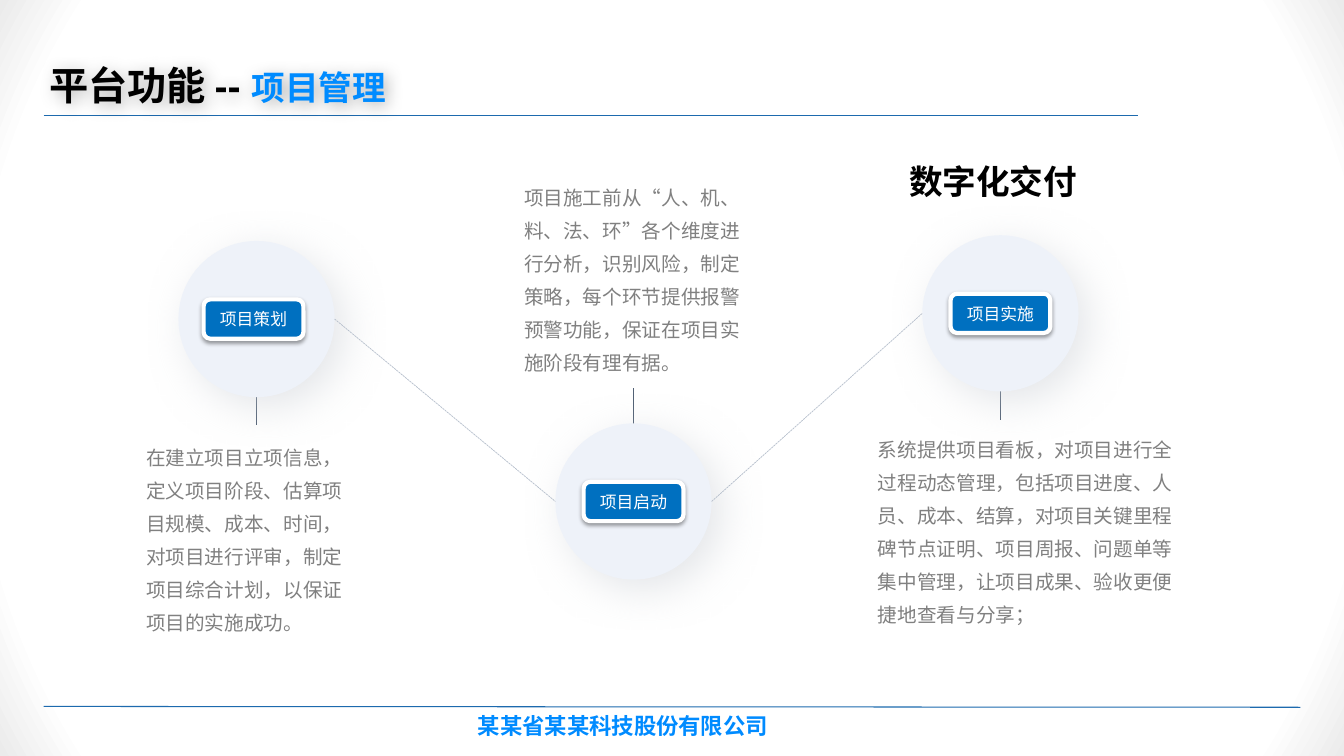
from dataclasses import dataclass
from itertools import pairwise

from pptx import Presentation
from pptx.dml.color import RGBColor
from pptx.enum.dml import MSO_LINE
from pptx.enum.shapes import MSO_CONNECTOR, MSO_SHAPE
from pptx.enum.text import MSO_ANCHOR, PP_ALIGN
from pptx.oxml import parse_xml
from pptx.oxml.ns import qn
from pptx.oxml.xmlchemy import OxmlElement
from pptx.shapes.autoshape import Shape
from pptx.slide import Slide
from pptx.text.text import Font
from pptx.util import Emu, Inches, Pt

COLUMNS, ROWS = 160, 90
CELL = Inches(7.5) / ROWS
DIAMETER = 18.6
BADGE_W, BADGE_H = 11.88, 4.68
STEM = 6.24
TEXT_H = 24.96
NS = 'xmlns:a="http://schemas.openxmlformats.org/drawingml/2006/main"'
CJK = "Noto Sans CJK SC"
BRIGHT = "008BFF"


@dataclass(frozen=True)
class Box:
    col: float
    row: float
    cols: float
    rows: float

    def emu(self) -> tuple[Emu, ...]:
        return tuple(cells(n) for n in (self.col, self.row, self.cols, self.rows))


@dataclass(frozen=True)
class Style:
    size: float
    color: str
    name: str = CJK
    bold: bool = False


@dataclass(frozen=True)
class Shadow:
    color: str
    alpha: int
    blur: float
    distance: float
    angle: int


@dataclass(frozen=True)
class Stage:
    label: str
    detail: str
    col: float
    row: float
    stem_row: float
    text: Box
    badge_shift: float = 0

    @property
    def middle(self) -> float:
        return self.row + DIAMETER / 2


@dataclass(frozen=True)
class Rule:
    start: tuple[float, float]
    end: tuple[float, float]
    color: str
    width: float
    dashed: bool = False


STAGES = [
    Stage("项目策划",
          "在建立项目立项信息，定义项目阶段、估算项目规模、成本、时间，"
          "对项目进行评审，制定项目综合计划，以保证项目的实施成功。",
          21.24, 28.68, 44.4, Box(17.4, 51.36, 24.84, TEXT_H), -0.36),
    Stage("项目启动",
          "项目施工前从“人、机、料、法、环”各个维度进行分析，识别风险，制定策略，"
          "每个环节提供报警预警功能，保证在项目实施阶段有理有据。",
          66.12, 50.4, 46.2, Box(62.4, 20.4, 25.92, TEXT_H)),
    Stage("项目实施",
          "系统提供项目看板，对项目进行全过程动态管理，包括项目进度、人员、成本、结算，"
          "对项目关键里程碑节点证明、项目周报、问题单等集中管理，"
          "让项目成果、验收更便捷地查看与分享；",
          109.8, 28, 43.8, Box(104.52, 50.4, 36.96, TEXT_H)),
]


def cells(n: float) -> Emu:
    return Emu(round(n * CELL))


def rgb(color: str) -> RGBColor:
    return RGBColor.from_string(color)


def set_font(font: Font, style: Style) -> None:
    font.size = Pt(style.size)
    font.bold = style.bold
    font.name = style.name
    font.color.rgb = rgb(style.color)
    ea = OxmlElement("a:ea")
    ea.set("typeface", CJK)
    font._element.find(qn("a:latin")).addnext(ea)


def add_shadow(sp: Shape, shadow: Shadow) -> None:
    sp.shadow.inherit = False
    sp._element.spPr.find(qn("a:effectLst")).append(parse_xml(
        f'<a:outerShdw {NS} blurRad="{Pt(shadow.blur)}" dist="{Pt(shadow.distance)}" '
        f'dir="{shadow.angle * 60000}" algn="ctr" rotWithShape="0">'
        f'<a:srgbClr val="{shadow.color}"><a:alpha val="{shadow.alpha * 1000}"/>'
        '</a:srgbClr></a:outerShdw>'))


def add_rule(s: Slide, rule: Rule) -> None:
    ends = [cells(n) for n in (*rule.start, *rule.end)]
    line = s.shapes.add_connector(MSO_CONNECTOR.STRAIGHT, *ends)
    line.line.color.rgb = rgb(rule.color)
    line.line.width = Pt(rule.width)
    if rule.dashed:
        line.line.dash_style = MSO_LINE.SQUARE_DOT
    line._element.spPr.append(OxmlElement("a:effectLst"))


def add_text(s: Slide, box: Box, text: str, style: Style,
             spacing: float = 1.0, inset: float = 0.1) -> Shape:
    sp = s.shapes.add_textbox(*box.emu())
    tf = sp.text_frame
    tf.word_wrap = True
    tf.margin_left = tf.margin_right = Inches(inset)
    p = tf.paragraphs[0]
    p.text = text
    p.line_spacing = spacing
    set_font(p.font, style)
    return sp


def add_circle(s: Slide, stage: Stage) -> None:
    box = Box(stage.col, stage.row, DIAMETER, DIAMETER)
    sp = s.shapes.add_shape(MSO_SHAPE.OVAL, *box.emu())
    sp.fill.solid()
    sp.fill.fore_color.rgb = rgb("EEF2F9")
    sp.line.fill.background()
    add_shadow(sp, Shadow("CACED4", 50, 30, 10, 45))


def add_badge(s: Slide, stage: Stage) -> None:
    box = Box(stage.col + (DIAMETER - BADGE_W) / 2 + stage.badge_shift,
              stage.middle - BADGE_H / 2, BADGE_W, BADGE_H)
    sp = s.shapes.add_shape(MSO_SHAPE.ROUNDED_RECTANGLE, *box.emu())
    sp.fill.solid()
    sp.fill.fore_color.rgb = rgb("0070C0")
    sp.line.color.rgb = rgb("FFFFFF")
    sp.line.width = Pt(3)
    add_shadow(sp, Shadow("000000", 38, 3.1, 1.6, 90))
    tf = sp.text_frame
    tf.vertical_anchor = MSO_ANCHOR.MIDDLE
    p = tf.paragraphs[0]
    p.text = stage.label
    p.alignment = PP_ALIGN.CENTER
    set_font(p.font, Style(12, "FFFFFF"))


def add_title(s: Slide) -> None:
    sp = add_text(s, Box(4.68, 4.68, 53.16, 9.12), "", Style(28, "000000", "Arial", True), 1.3)
    sp.text_frame.vertical_anchor = MSO_ANCHOR.MIDDLE
    p = sp.text_frame.paragraphs[0]
    p.add_run().text = "平台功能 -- "
    r = p.add_run()
    r.text = "项目管理"
    set_font(r.font, Style(24, BRIGHT, "Arial", True))
    add_shadow(sp, Shadow("000000", 30, 12, 3, 45))


def add_background(s: Slide) -> None:
    s.element.cSld.insert(0, parse_xml(
        f'<p:bg {NS} xmlns:p="http://schemas.openxmlformats.org/presentationml/2006/main">'
        '<p:bgPr><a:gradFill rotWithShape="1"><a:gsLst>'
        '<a:gs pos="90000"><a:srgbClr val="FFFFFF"/></a:gs>'
        '<a:gs pos="100000"><a:srgbClr val="EBEBEB"/></a:gs></a:gsLst>'
        '<a:path path="circle"><a:fillToRect l="50000" t="50000" r="50000" b="50000"/></a:path>'
        '</a:gradFill><a:effectLst/></p:bgPr></p:bg>'))


def main() -> None:
    prs = Presentation()
    prs.slide_width, prs.slide_height = cells(COLUMNS), cells(ROWS)
    s = prs.slides.add_slide(prs.slide_layouts[6])
    add_background(s)
    add_rule(s, Rule((5.2, 13.8), (135.5, 13.8), "1D6AAE", 0.75))
    add_rule(s, Rule((5.2, 84.1), (154.8, 84.2), "1D6AAE", 0.75))
    add_text(s, Box(55.7, 84.2, 48.6, 4.44), "某某省某某科技股份有限公司",
             Style(16, BRIGHT, "Arial", True))
    for stage in STAGES:
        center = stage.col + DIAMETER / 2
        add_rule(s, Rule((center, stage.stem_row), (center, stage.stem_row + STEM),
                         "526175", 0.5))
        add_circle(s, stage)
    for a, b in pairwise(STAGES):
        add_rule(s, Rule((a.col + DIAMETER, a.middle), (b.col, b.middle), "B6BFCC", 0.5, True))
    for stage in STAGES:
        add_badge(s, stage)
        add_text(s, stage.text, stage.detail, Style(14, "808080"), 1.4, 0)
    add_text(s, Box(107.04, 18.6, 22.56, 6), "数字化交付", Style(24, "000000", bold=True))
    add_title(s)
    prs.save("out.pptx")


if __name__ == "__main__":
    main()
